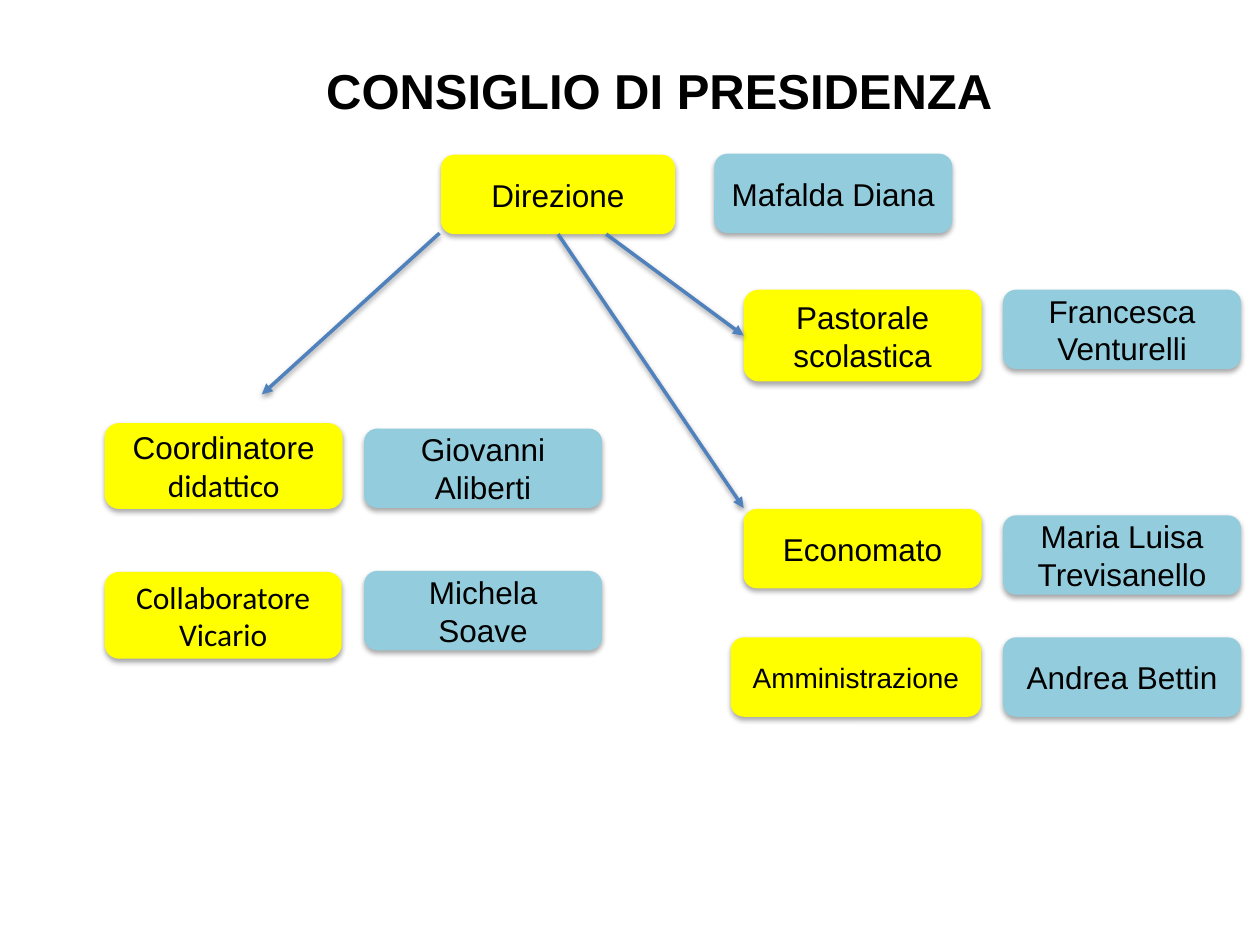
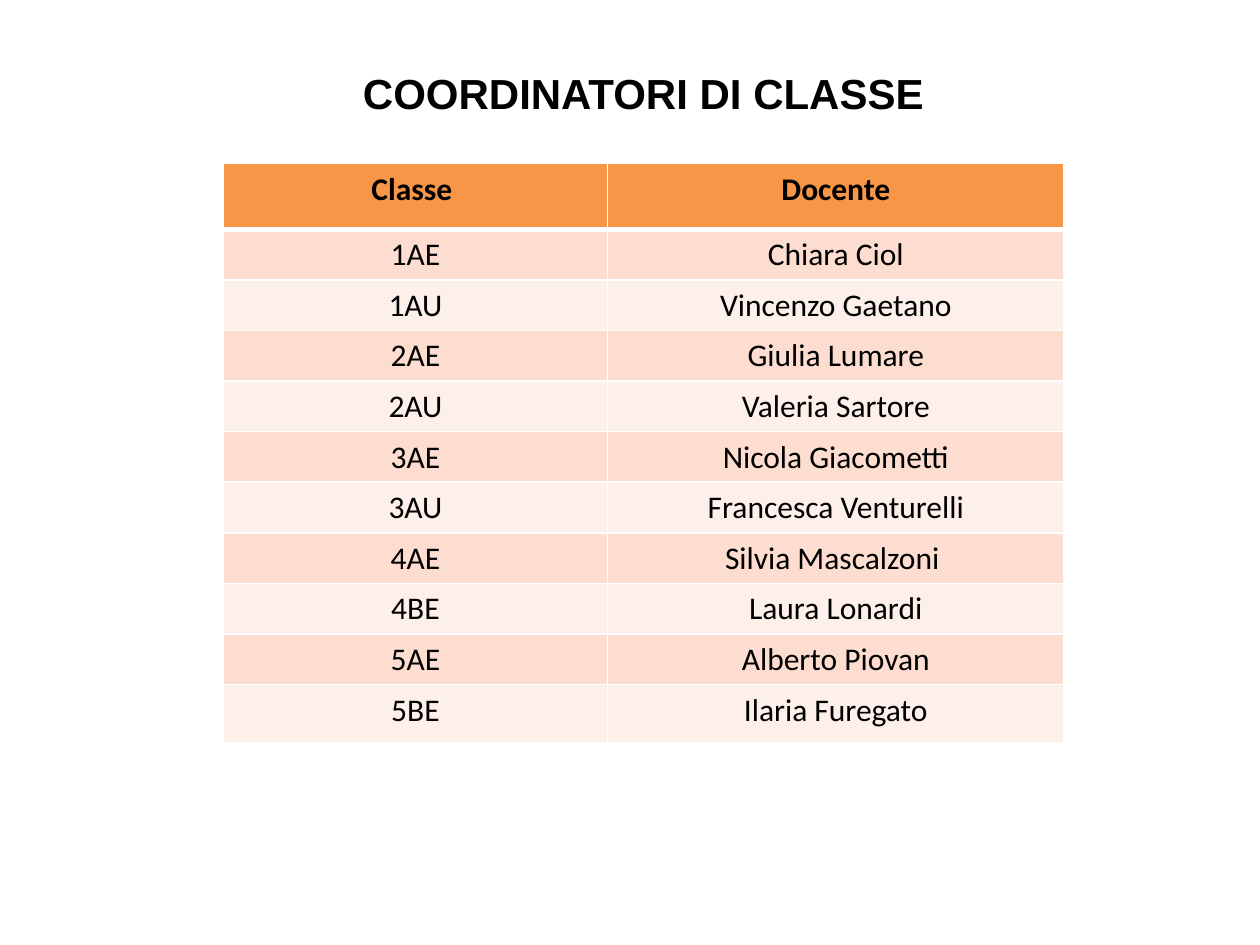
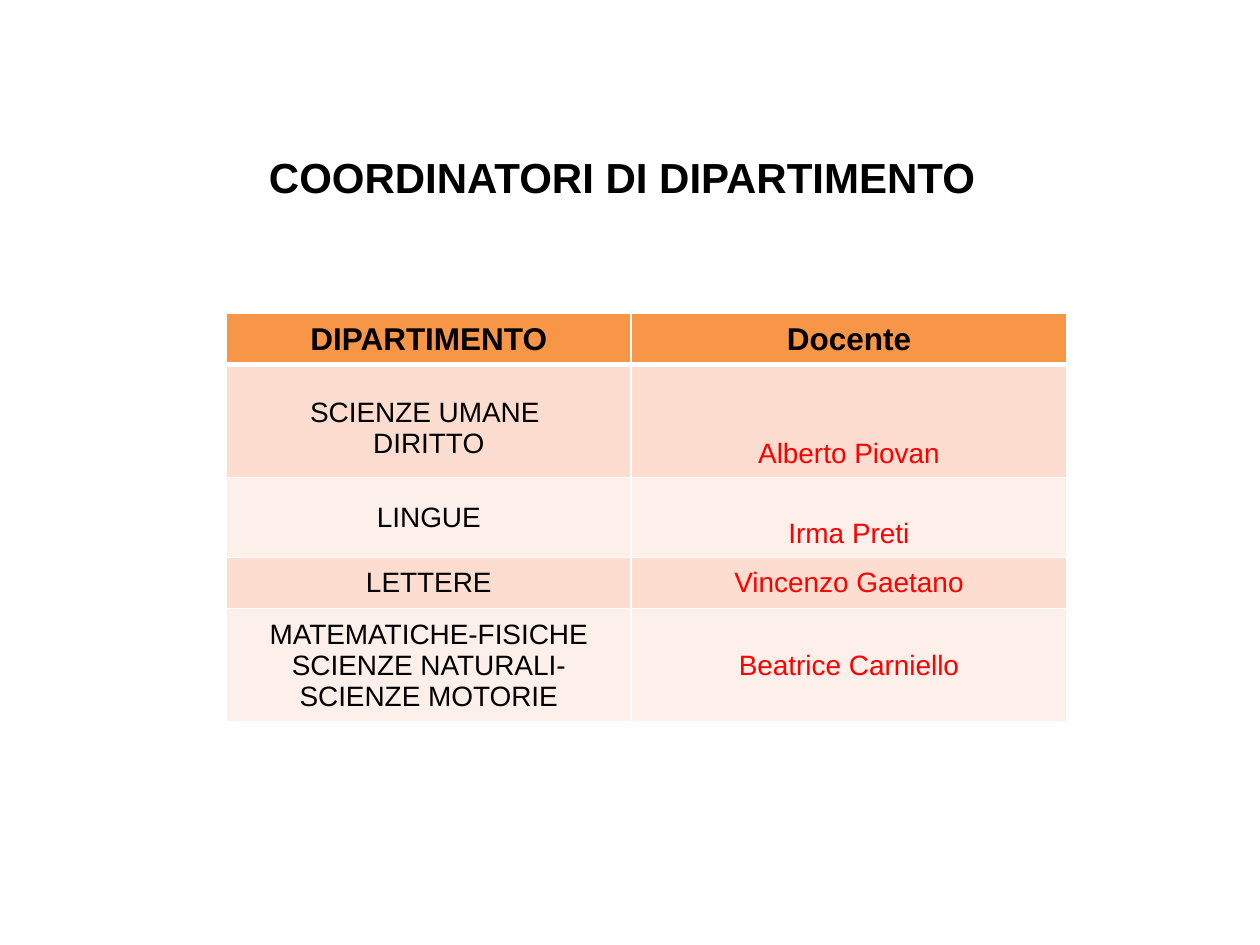
"""Build three slides on a school's staff: a role chart and two tables."""
from lxml import etree
from pptx import Presentation
from pptx.dml.color import RGBColor
from pptx.enum.shapes import MSO_CONNECTOR, MSO_SHAPE
from pptx.enum.text import MSO_ANCHOR, PP_ALIGN
from pptx.oxml import parse_xml
from pptx.oxml.ns import qn
from pptx.util import Cm, Pt

ROUND = MSO_SHAPE.ROUNDED_RECTANGLE
LINE = MSO_CONNECTOR.STRAIGHT
MID, TOP = MSO_ANCHOR.MIDDLE, MSO_ANCHOR.TOP
CENTER = PP_ALIGN.CENTER
NS = 'xmlns:a="http://schemas.openxmlformats.org/drawingml/2006/main"'

HUES = {"ink": "000000", "red": "FF0000", "role": "FFFF00", "name": "93CDDD",
        "arrow": "4F81BD", "head": "F79646", "odd": "FCDDCF",
        "even": "FDEFE9", "rule": "FFFFFF"}
ARIAL = {"name": "Arial", "size": Pt(18), "bold": False}
SMALL = {**ARIAL, "size": Pt(16)}
CALIBRI = {**ARIAL, "name": "Calibri"}
TITLE = {**ARIAL, "size": Pt(24), "bold": True}

ROLES = [
    ("Direzione", (8.89, 3.12, 4.72, 1.6), ARIAL),
    ("Coordinatore| didattico", (2.11, 8.53, 4.8, 1.73), ARIAL),
    ("Collaboratore Vicario", (2.11, 11.53, 4.78, 1.75), CALIBRI),
    ("Pastorale scolastica", (14.99, 5.84, 4.8, 1.85), ARIAL),
    ("Economato", (14.99, 10.26, 4.8, 1.6), ARIAL),
    ("Amministrazione", (14.73, 12.85, 5.05, 1.6), SMALL),
]
NAMES = [
    ("Giovanni Aliberti", 7.34, 8.64),
    ("Maria Luisa Trevisanello", 20.22, 10.39),
    ("Mafalda Diana", 14.4, 3.1),
    ("Francesca Venturelli", 20.22, 5.84),
    ("Michela Soave", 7.34, 11.51),
    ("Andrea Bettin", 20.22, 12.85),
]
NAME_SIZE = (4.8, 1.6)
ARROWS = [
    ((8.86, 4.7, 5.28, 7.95), None, None),
    ((12.22, 4.72, 14.99, 6.76), None, ("Pastorale scolastica", 1)),
    ((11.25, 4.72, 14.99, 10.24), ("Direzione", 2), None),
]
CLASSES = [
    ("Classe ", "Docente"),
    ("1AE", "Chiara Ciol"),
    ("1AU", "Vincenzo Gaetano"),
    ("2AE", "Giulia Lumare"),
    ("2AU", "Valeria Sartore"),
    ("3AE", "Nicola Giacometti"),
    ("3AU", "Francesca Venturelli"),
    ("4AE", "Silvia Mascalzoni "),
    ("4BE", "Laura Lonardi"),
    ("5AE", "Alberto Piovan"),
    ("5BE", "Ilaria Furegato"),
]
FIELDS = [
    ("DIPARTIMENTO", "Docente"),
    ("SCIENZE UMANE \nDIRITTO", "Alberto Piovan"),
    ("LINGUE", "Irma Preti"),
    ("LETTERE", "Vincenzo Gaetano"),
    ("MATEMATICHE-FISICHE\nSCIENZE NATURALI- SCIENZE MOTORIE",
     "Beatrice Carniello"),
]
CLASS_LOOK = {"left": 4.5, "top": 3.3, "cols": (7.75, 9.2),
              "rows": [1.32] + [1.02] * 9 + [1.17], "font": CALIBRI,
              "body": CALIBRI, "inks": ("ink", "ink"), "anchor": TOP,
              "drops": {}}
FIELD_LOOK = {"left": 4.57, "top": 6.32, "cols": (8.15, 8.79),
              "rows": [1.03, 2.28, 1.61, 1.03, 2.28], "font": ARIAL,
              "body": SMALL, "inks": ("ink", "red"), "anchor": MID,
              "drops": {(1, 0): 7, (1, 1): 32, (2, 1): 16}}


def tint(hue):
    return RGBColor.from_string(HUES[hue])


def write(frame, text, font, ink="ink"):
    """Fill a frame: newlines split paragraphs, bars split runs."""
    frame.word_wrap = True
    for num, part in enumerate(text.split("\n")):
        para = frame.add_paragraph() if num else frame.paragraphs[0]
        para.alignment = CENTER
        for pos, bit in enumerate(part.split("|")):
            run = para.add_run()
            run.text = bit
            look = {**font, "name": "Calibri"} if pos else font
            for key, val in look.items():
                setattr(run.font, key, val)
            run.font.color.rgb = tint(ink)


def shade(shape, dist, alpha):
    """Give a shape a soft shadow straight below it."""
    shape._element.spPr.append(parse_xml(
        f'<a:effectLst {NS}><a:outerShdw blurRad="40000" dist="{dist}" '
        f'dir="5400000" rotWithShape="0"><a:srgbClr val="{HUES["ink"]}">'
        f'<a:alpha val="{alpha}"/></a:srgbClr></a:outerShdw></a:effectLst>'))


def add_title(slide, text, place, font=TITLE):
    box = slide.shapes.add_textbox(*map(Cm, place))
    write(box.text_frame, text, font)


def add_box(slide, text, place, hue, font=ARIAL):
    box = slide.shapes.add_shape(ROUND, *map(Cm, place))
    box.fill.solid()
    box.fill.fore_color.rgb = tint(hue)
    box.line.fill.background()
    shade(box, 23000, 35000)
    box.text_frame.vertical_anchor = MID
    write(box.text_frame, text, font)
    return box


def add_arrow(slide, ends, start, stop, boxes):
    line = slide.shapes.add_connector(LINE, *map(Cm, ends))
    if start:
        line.begin_connect(boxes[start[0]], start[1])
    if stop:
        line.end_connect(boxes[stop[0]], stop[1])
    line.line.color.rgb = tint("arrow")
    line.line.width = Pt(2)
    etree.SubElement(line.line._get_or_add_ln(), qn("a:tailEnd"),
                     type="triangle")
    shade(line, 20000, 38000)


def edge(cell, row):
    """Draw white cell borders, with a thick one below the header."""
    wide = {"T": 3 if row == 1 else 1, "B": 3 if row == 0 else 1}
    for side in "LRTB":
        cell._tc.get_or_add_tcPr().append(parse_xml(
            f'<a:ln{side} {NS} w="{Pt(wide.get(side, 1))}"><a:solidFill>'
            f'<a:srgbClr val="{HUES["rule"]}"/></a:solidFill></a:ln{side}>'))


def add_grid(slide, data, look):
    cols, rows = look["cols"], look["rows"]
    place = (look["left"], look["top"], sum(cols), sum(rows))
    grid = slide.shapes.add_table(len(rows), len(cols), *map(Cm, place)).table
    for col, wide in zip(grid.columns, cols):
        col.width = Cm(wide)
    for row, high in zip(grid.rows, rows):
        row.height = Cm(high)
    for row, texts in enumerate(data):
        for col, text in enumerate(texts):
            cell = grid.cell(row, col)
            edge(cell, row)
            cell.fill.solid()
            hue = ("odd" if row % 2 else "even") if row else "head"
            cell.fill.fore_color.rgb = tint(hue)
            cell.vertical_anchor = look["anchor"]
            drop = look["drops"].get((row, col), 0)
            cell.margin_top = Cm(0.13) + Pt(drop * 1.15)
            font = look["body"] if row else {**look["font"], "bold": True}
            ink = look["inks"][col] if row else "ink"
            write(cell.text_frame, text, font, ink)


def main():
    deck = Presentation()
    deck.slide_width, deck.slide_height = Cm(25.4), Cm(19.05)
    chart, classes, fields = (
        deck.slides.add_slide(deck.slide_layouts[6]) for _ in range(3))

    boxes = {text: add_box(chart, text, place, "role", font)
             for text, place, font in ROLES}
    add_title(chart, "CONSIGLIO DI PRESIDENZA", (4.55, 1.09, 17.48, 1.45),
              {**TITLE, "size": Pt(28)})
    for text, left, top in NAMES:
        add_box(chart, text, (left, top, *NAME_SIZE), "name")
    for ends, start, stop in ARROWS:
        add_arrow(chart, ends, start, stop, boxes)

    add_title(classes, "COORDINATORI DI CLASSE", (2.67, 1.24, 20.6, 1.04))
    add_grid(classes, CLASSES, CLASS_LOOK)

    add_title(fields, "COORDINATORI DI DIPARTIMENTO", (2.24, 2.92, 20.6, 1.27))
    add_grid(fields, FIELDS, FIELD_LOOK)
    deck.save("out.pptx")


if __name__ == "__main__":
    main()
